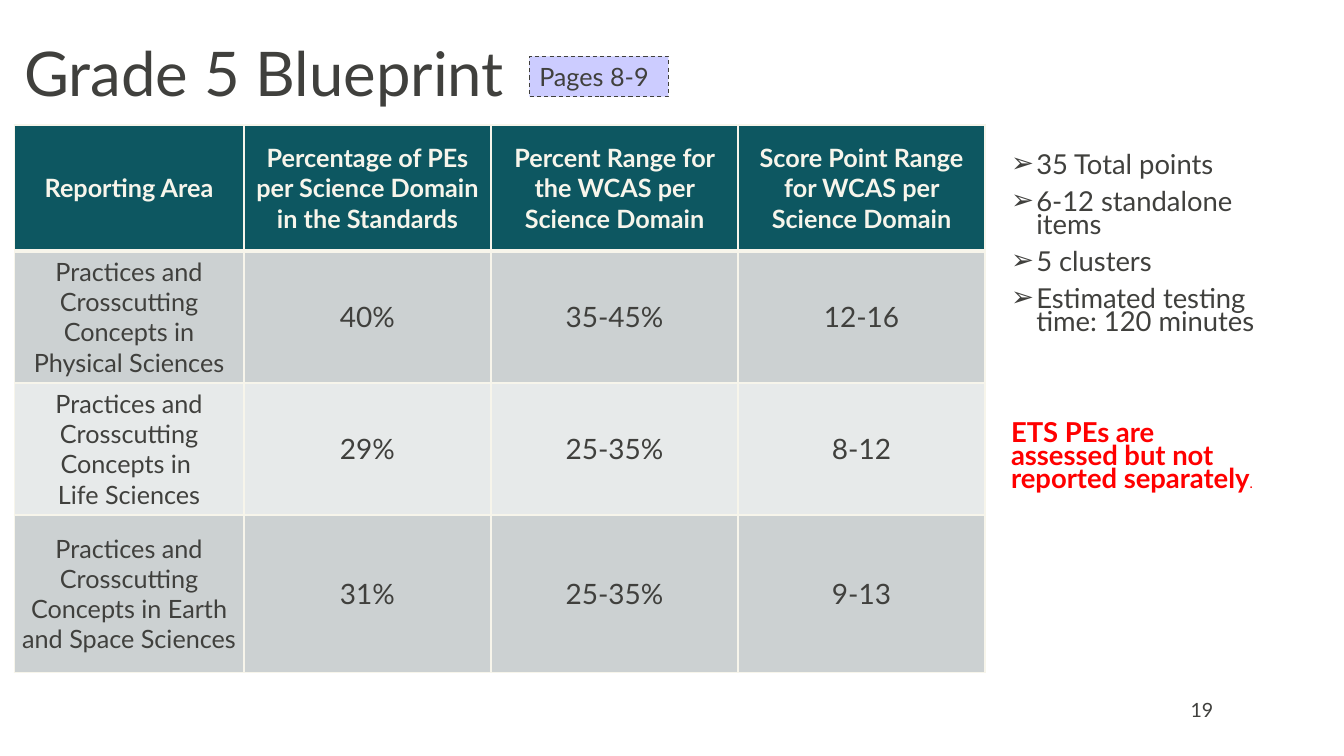
"""Build the Grade 5 Blueprint slide."""
from dataclasses import dataclass

from lxml import etree
from pptx import Presentation, util as u
from pptx.dml.color import RGBColor
from pptx.enum import dml, shapes, text
from pptx.oxml import ns

PX = 9144
FONT = "Lato"
INK = RGBColor(0x40, 0x40, 0x3D)
CREAM = RGBColor(0xF7, 0xF5, 0xEB)
TEAL = RGBColor(0x0D, 0x57, 0x61)
GREY = RGBColor(0xCC, 0xD1, 0xD2)
PALE = RGBColor(0xE7, 0xEA, 0xEA)
LILAC = RGBColor(0xCC, 0xCC, 0xFF)
RED = RGBColor(0xFF, 0x00, 0x00)

COLUMNS = (228, 245, 245, 245)
HEADINGS = (
    "Reporting Area",
    "Percentage of PEs per Science Domain in the Standards",
    "Percent Range for the WCAS per Science Domain",
    "Score Point Range for WCAS per Science Domain",
)
FACTS = (
    "35 Total points",
    "6-12 standalone items",
    "5 clusters",
    "Estimated testing time: 120 minutes",
)


@dataclass(frozen=True)
class Box:
    left: int
    top: int
    width: int
    height: int

    def emu(self) -> tuple[int, ...]:
        return tuple(v * PX for v in (self.left, self.top, self.width, self.height))


@dataclass(frozen=True)
class Row:
    height: int
    cells: tuple[str, ...]
    fill: RGBColor
    header: bool = False


ROWS = (
    Row(125, HEADINGS, TEAL, True),
    Row(131, ("Practices and Crosscutting Concepts in Physical Sciences",
              "40%", "35-45%", "12-16"), GREY),
    Row(131, ("Practices and Crosscutting Concepts in \vLife Sciences",
              "29%", "25-35%", "8-12"), PALE),
    Row(156, ("Practices and Crosscutting Concepts in Earth and Space Sciences",
              "31%", "25-35%", "9-13"), GREY),
)


def style(font, size: float, color: RGBColor = INK, bold: bool = False) -> None:
    font.name, font.size, font.bold = FONT, u.Pt(size), bold
    font.color.rgb = color


def add_label(s, box: Box, words: str, size: float):
    sp = s.shapes.add_textbox(*box.emu())
    tf = sp.text_frame
    tf.word_wrap = True
    tf.vertical_anchor = text.MSO_ANCHOR.MIDDLE
    p = tf.paragraphs[0]
    p.text = words
    style(p.font, size)


def add_title(s, box: Box, words: str) -> None:
    sp = s.shapes.title
    sp.left, sp.top, sp.width, sp.height = box.emu()
    tf = sp.text_frame
    tf.auto_size = text.MSO_AUTO_SIZE.NONE
    tf.vertical_anchor = text.MSO_ANCHOR.MIDDLE
    p = tf.paragraphs[0]
    p.text = words
    p.alignment = text.PP_ALIGN.LEFT
    p.line_spacing = 0.9
    style(p.font, 44)


def set_borders(cell, widths: dict[str, int]) -> None:
    tc_pr = cell._tc.get_or_add_tcPr()
    for i, (side, width) in enumerate(widths.items()):
        ln = etree.Element(ns.qn(f"a:ln{side}"), w=str(u.Pt(width)))
        fill = etree.SubElement(ln, ns.qn("a:solidFill"))
        etree.SubElement(fill, ns.qn("a:srgbClr"), val=str(CREAM))
        tc_pr.insert(i, ln)


def add_blueprint(s, box: Box) -> None:
    table = s.shapes.add_table(len(ROWS), len(COLUMNS), *box.emu()).table
    table.first_row = table.horz_banding = False
    for column, width in zip(table.columns, COLUMNS):
        column.width = width * PX
    for i, row in enumerate(ROWS):
        table.rows[i].height = row.height * PX
        for j, words in enumerate(row.cells):
            cell = table.cell(i, j)
            cell.fill.solid()
            cell.fill.fore_color.rgb = row.fill
            cell.margin_left = cell.margin_right = 6 * PX
            cell.margin_top = cell.margin_bottom = 5 * PX
            cell.vertical_anchor = text.MSO_ANCHOR.MIDDLE
            set_borders(cell, {"L": 1, "R": 1, "T": 3 if i == 1 else 1,
                               "B": 3 if row.header else 1})
            p = cell.text_frame.paragraphs[0]
            p.text = words
            p.alignment = text.PP_ALIGN.CENTER
            style(p.font, 18 if row.header or j == 0 else 20,
                  CREAM if row.header else INK, row.header)


def add_bullet(p) -> None:
    p_pr = p._p.get_or_add_pPr()
    p_pr.set("marL", str(25 * PX))
    p_pr.set("indent", str(-25 * PX))
    etree.SubElement(p_pr, ns.qn("a:buFont"), typeface="Arial")
    etree.SubElement(p_pr, ns.qn("a:buChar"), char="➢")


def add_facts(s, box: Box) -> None:
    tf = s.shapes.add_textbox(*box.emu()).text_frame
    tf.word_wrap = True
    for i, fact in enumerate(FACTS):
        p = tf.add_paragraph() if i else tf.paragraphs[0]
        p.text = fact
        add_bullet(p)
        p.line_spacing = 0.7
        if i:
            p.space_before = u.Pt(10)
        style(p.font, 19.6)
    p = tf.add_paragraph()
    p.line_spacing = 0.7
    p.space_before = u.Pt(63)
    for words, size in (("ETS PEs are assessed but not reported separately", 19.6), (".", 8.4)):
        r = p.add_run()
        r.text = words
        style(r.font, size, RED, True)


def add_pages_tag(s, box: Box, words: str) -> None:
    sp = s.shapes.add_shape(shapes.MSO_SHAPE.RECTANGLE, *box.emu())
    sp.shadow.inherit = False
    sp.fill.solid()
    sp.fill.fore_color.rgb = LILAC
    sp.line.color.rgb = INK
    sp.line.width = u.Pt(0.75)
    sp.line.dash_style = dml.MSO_LINE.DASH
    p = sp.text_frame.paragraphs[0]
    p.text = words
    p.alignment = text.PP_ALIGN.LEFT
    style(p.font, 18)


def main() -> None:
    prs = Presentation()
    prs.slide_width, prs.slide_height = 1333 * PX, 750 * PX
    s = prs.slides.add_slide(prs.slide_layouts.get_by_name("Title Only"))
    add_title(s, Box(14, 28, 728, 96), "Grade 5 Blueprint")
    add_label(s, Box(1171, 684, 70, 40), "19", 14)
    add_blueprint(s, Box(14, 124, sum(COLUMNS), sum(row.height for row in ROWS)))
    add_facts(s, Box(993, 150, 263, 439))
    add_pages_tag(s, Box(525, 56, 138, 40), "Pages 8-9")
    prs.save("out.pptx")


if __name__ == "__main__":
    main()
